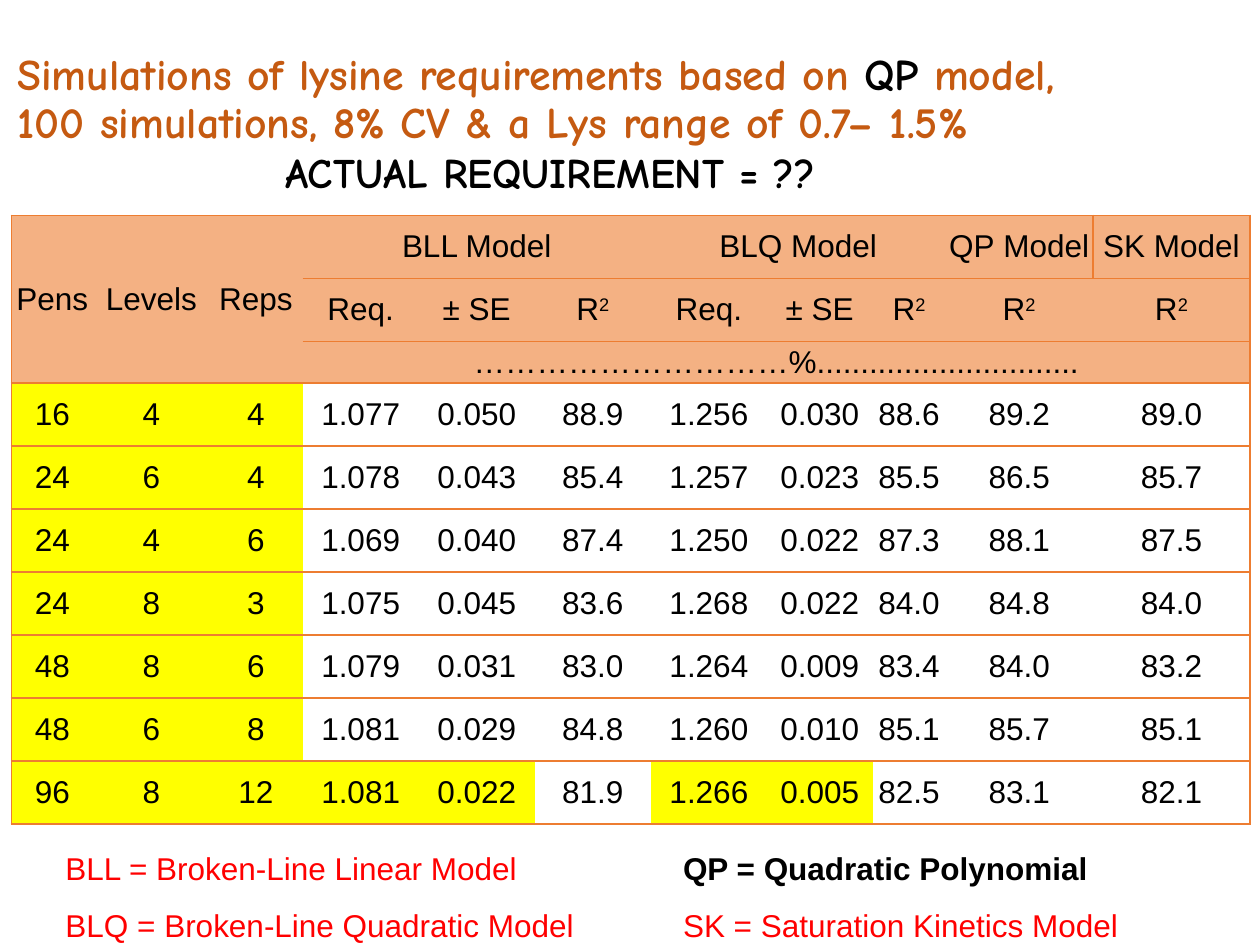
from lxml.etree import SubElement
from pptx import Presentation
from pptx.dml.color import RGBColor
from pptx.enum.text import MSO_ANCHOR as Anchor, MSO_AUTO_SIZE as AutoSize, PP_ALIGN as Align
from pptx.oxml import parse_xml
from pptx.oxml.ns import nsdecls, qn
from pptx.util import Cm, Pt

ORANGE, BLACK, RED = "C55A11", "000000", "FF0000"
LINE, HEADER, YELLOW, WHITE = "ED7D31", "F4B183", "FFFF00", "FFFFFF"
HEADING = {"name": "Comic Neue", "bold": True}
BODY = {"name": "Arial", "size": Pt(18)}

COLUMNS = [1.65, 2.34, 1.88, 2.34, 2.34, 2.34, 2.34, 2.13, 1.47, 2.97, 3.17]
ROWS = [1.27, 1.27, 0.84] + [1.27] * 7
MERGES = [(0, 0, 2, 0), (0, 1, 2, 1), (0, 2, 2, 2), (0, 3, 0, 5), (0, 6, 0, 8), (2, 3, 2, 10)]
HEADERS = [
    ["Pens", "Levels", "Reps", "BLL Model", "", "", "BLQ Model", "", "",
     "QP\u00a0Model", "SK\u00a0Model"],
    ["", "", ""] + ["Req.", "± SE", "R^2"] * 2 + ["R^2", "R^2"],
    ["", "", "", "…………………………%.............................."] + [""] * 7,
]
RESULTS = """
16 4 4 1.077 0.050 88.9 1.256 0.030 88.6 89.2 89.0
24 6 4 1.078 0.043 85.4 1.257 0.023 85.5 86.5 85.7
24 4 6 1.069 0.040 87.4 1.250 0.022 87.3 88.1 87.5
24 8 3 1.075 0.045 83.6 1.268 0.022 84.0 84.8 84.0
48 8 6 1.079 0.031 83.0 1.264 0.009 83.4 84.0 83.2
48 6 8 1.081 0.029 84.8 1.260 0.010 85.1 85.7 85.1
96 8 12 1.081 0.022 81.9 1.266 0.005 82.5 83.1 82.1
"""


def color(value):
    return RGBColor.from_string(value)


def set_all(target, values):
    for name, value in values.items():
        setattr(target, name, value)


def add_span(para, text, hue, font):
    span = para.add_run()
    span.text = text
    set_all(span.font, font)
    span.font.color.rgb = color(hue)
    return span


def place(shape, box):
    set_all(shape, dict(zip(("left", "top", "width", "height"), map(Cm, box))))


def fill_title(page, box):
    title = page.shapes.title
    place(title, box)
    set_all(title.text_frame, {"vertical_anchor": Anchor.MIDDLE, "word_wrap": True,
                               "auto_size": AutoSize.NONE})
    para = title.text_frame.paragraphs[0]
    set_all(para, {"alignment": Align.LEFT, "line_spacing": 0.9})
    font = HEADING | {"size": Pt(25)}
    add_span(para, "Simulations of lysine requirements based on ", ORANGE, font)
    add_span(para, "QP", BLACK, font)
    add_span(para, " model,", ORANGE, font)
    para.add_line_break()
    add_span(para, "100 simulations, 8% CV & a Lys range of 0.7– 1.5%", ORANGE, font)


def add_question(page, box):
    frame = page.shapes.add_textbox(*map(Cm, box)).text_frame
    frame.word_wrap = False
    add_span(frame.paragraphs[0], "ACTUAL REQUIREMENT = ??", BLACK, HEADING | {"size": Pt(24)})


def set_borders(cell, visible):
    props = cell._tc.get_or_add_tcPr()
    for position, side in enumerate("LRTB"):
        paint = f'<a:solidFill><a:srgbClr val="{LINE}"/></a:solidFill>' if side in visible else "<a:noFill/>"
        props.insert(position, parse_xml(
            f'<a:ln{side} {nsdecls("a")} w="{Pt(1)}">{paint}</a:ln{side}>'))


def visible_sides(cell, row, column):
    last = len(COLUMNS) - 1
    in_label_block = column < 3 and row < 3
    rules = {
        "L": column == 0 or (row, column) == (0, last),
        "R": column + cell.span_width - 1 == last or column == last or (row, column) == (0, last - 1),
        "T": not in_label_block or row == 0,
        "B": not in_label_block or row != 1,
    }
    return {side for side, shown in rules.items() if shown}


def cell_fill(row, column):
    if row < len(HEADERS):
        return HEADER
    best = row == len(ROWS) - 1 and column in (3, 4, 6, 7)
    return YELLOW if column < 3 or best else WHITE


def fill_cell(cell, text, row, column):
    set_all(cell, {"margin_left": 0, "margin_right": 0, "margin_top": 0, "margin_bottom": 0,
                   "vertical_anchor": Anchor.MIDDLE})
    cell.fill.solid()
    cell.fill.fore_color.rgb = color(cell_fill(row, column))
    set_borders(cell, visible_sides(cell, row, column))
    if text:
        para = cell.text_frame.paragraphs[0]
        para.alignment = Align.CENTER
        base, _, power = text.partition("^")
        add_span(para, base, BLACK, BODY)
        if power:
            add_span(para, power, BLACK, BODY)._r.get_or_add_rPr().set("baseline", "30000")


def add_results(page, box):
    table = page.shapes.add_table(len(ROWS), len(COLUMNS), *map(Cm, box)).table
    set_all(table, {"first_row": False, "horz_banding": False})
    for column, width in zip(table.columns, COLUMNS):
        column.width = Cm(width)
    for row, height in zip(table.rows, ROWS):
        row.height = Cm(height)
    for top, left, bottom, right in MERGES:
        table.cell(top, left).merge(table.cell(bottom, right))
    lines = HEADERS + [line.split() for line in RESULTS.strip().splitlines()]
    for row, line in enumerate(lines):
        for column, text in enumerate(line):
            fill_cell(table.cell(row, column), text, row, column)


def add_legend(page, box):
    frame = page.shapes.add_textbox(*map(Cm, box)).text_frame
    set_all(frame, {"word_wrap": True, "margin_left": Cm(1.52)})
    entries = [
        ("BLL = Broken-Line Linear Model", "QP = Quadratic Polynomial", BLACK, True),
        ("BLQ = Broken-Line Quadratic Model", "SK = Saturation Kinetics Model", RED, False),
    ]
    for index, (left, right, hue, bold) in enumerate(entries):
        para = frame.add_paragraph() if index else frame.paragraphs[0]
        para.line_spacing = 1.5
        tabs = SubElement(para._p.get_or_add_pPr(), qn("a:tabLst"))
        SubElement(tabs, qn("a:tab"), pos=str(Cm(12.45)), algn="l")
        add_span(para, left + "\t", RED, BODY)
        add_span(para, right, hue, BODY | {"bold": bold})


def main():
    deck = Presentation()
    set_all(deck, {"slide_width": Cm(25.4), "slide_height": Cm(19.05)})
    page = deck.slides.add_slide(deck.slide_layouts[5])
    fill_title(page, (0.1, 0.43, 25.1, 3.18))
    add_results(page, (0.23, 4.34, sum(COLUMNS), sum(ROWS)))
    add_legend(page, (-0.2, 16.61, 25.6, 2.57))
    add_question(page, (5.51, 2.82, 13.18, 1.27))
    deck.save("out.pptx")


if __name__ == "__main__":
    main()
